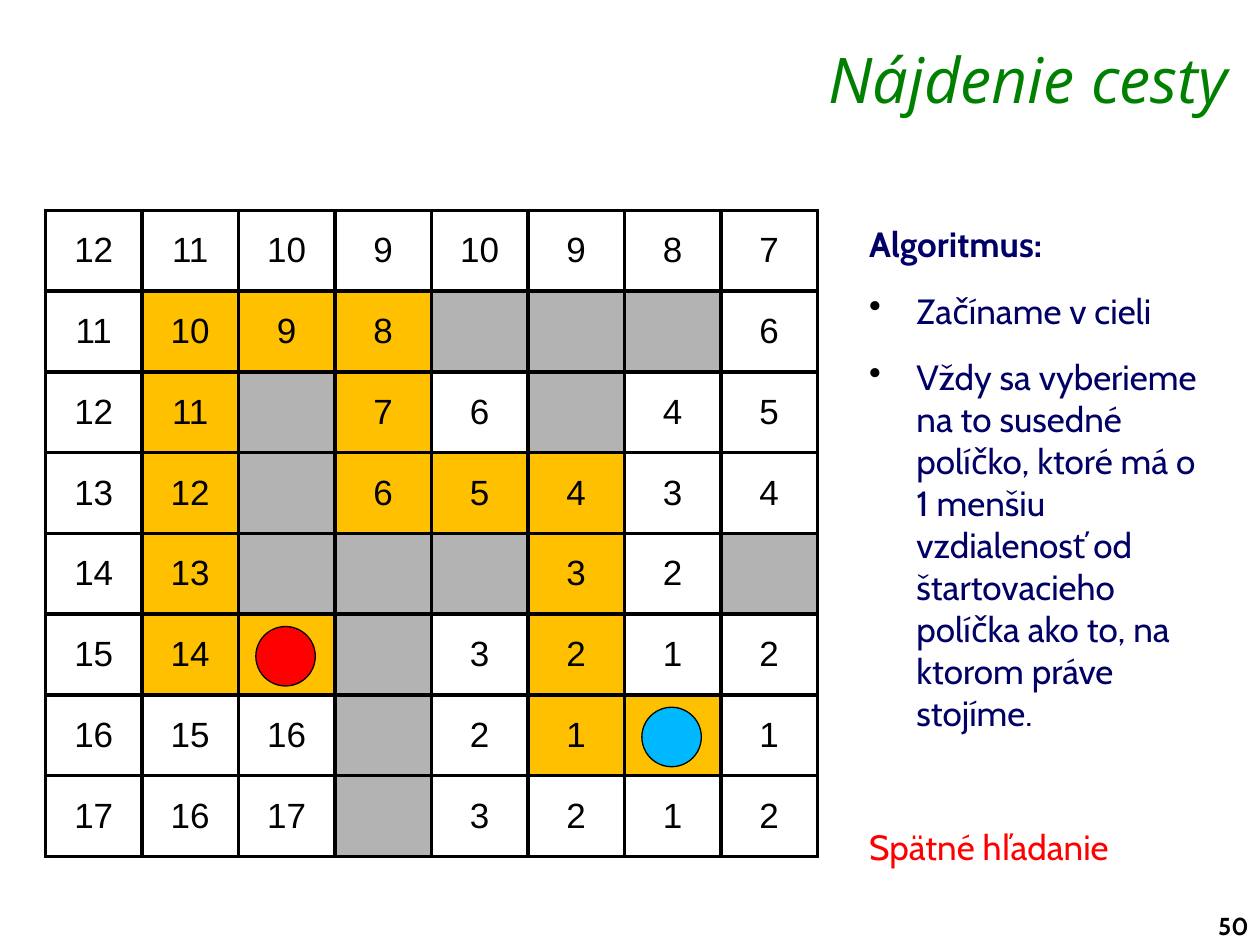
import pptx
import pptx.util
import pptx.dml.color
import pptx.enum.shapes
import pptx.enum.text
import pptx.oxml
import pptx.oxml.ns
from dataclasses import dataclass

Pt = pptx.util.Pt
ALIGN = pptx.enum.text.PP_ALIGN
ANCHOR = pptx.enum.text.MSO_ANCHOR

TITLE = "Nájdenie cesty"
PAGE_NUMBER = "50"

# "#" is a wall, "*" marks a square on the path; the rest is the distance.
MAZE = [
    "12 11 10 9 10 9 8 7",
    "11 10* 9* 8* # # # 6",
    "12 11* # 7* 6 # 4 5",
    "13 12* # 6* 5* 4* 3 4",
    "14 13* # # # 3* 2 #",
    "15 14* * # 3 2* 1 2",
    "16 15 16 # 2 1* * 1",
    "17 16 17 # 3 2 1 2",
]

HEADING = "Algoritmus:"
STEPS = [
    "Začíname v cieli",
    "Vždy sa vyberieme na to susedné políčko, ktoré má o 1 menšiu vzdialenosť "
    "od štartovacieho políčka ako to, na ktorom práve stojíme.",
]
CONCLUSION = "Spätné hľadanie"


@dataclass(frozen=True)
class Theme:
    title_font: str = "Open Sans"
    body_font: str = "Cabin"
    grid_font: str = "Arial"
    title_size: int = 36
    body_size: int = 20
    number_size: int = 14
    title: str = "008000"
    body: str = "000066"
    black: str = "000000"
    free: str = "FFFFFF"
    wall: str = "B3B3B3"
    path_square: str = "FFC000"
    start: str = "00B8FF"
    goal: str = "FF0000"


THEME = Theme()

# Row, column and colour of each marker
MARKERS = [(6, 6, THEME.start), (5, 2, THEME.goal)]

GRID_LEFT, GRID_TOP = 26, 120.2
CELL_WIDTH, CELL_HEIGHT = 55.15, 46.15
BORDER = 2.25
MARKER_SIZE = 34
MARKER_SHIFT = (-0.7, 1)
STEP_INDENT = 27
GAP = 7


def rgb(value):
    return pptx.dml.color.RGBColor.from_string(value)


def style(font, name, size, color, bold=False, italic=False):
    font.name, font.size = name, Pt(size)
    font.bold, font.italic = bold, italic
    font.color.rgb = rgb(color)


def add_text(page, left, top, width, height, wrap=True):
    box = page.shapes.add_textbox(Pt(left), Pt(top), Pt(width), Pt(height))
    box.text_frame.word_wrap = wrap
    return box.text_frame


def add_borders(cell):
    properties = cell._tc.get_or_add_tcPr()
    for side in "LRTB":
        properties.append(pptx.oxml.parse_xml(
            f'<a:ln{side} {pptx.oxml.ns.nsdecls("a")} w="{Pt(BORDER)}"><a:solidFill>'
            f'<a:srgbClr val="{THEME.black}"/></a:solidFill></a:ln{side}>'))


def set_indent(para, bullet):
    """Give the paragraph a hanging indent, with a black bullet if asked."""
    properties = para._p.get_or_add_pPr()
    properties.set("marL", str(Pt(STEP_INDENT)))
    properties.set("indent", str(-Pt(STEP_INDENT)))
    namespace = pptx.oxml.ns.nsdecls("a")
    if bullet:
        marks = [f'<a:buClr {namespace}><a:srgbClr val="{THEME.black}"/></a:buClr>',
                 f'<a:buChar {namespace} char="•"/>']
    else:
        marks = [f"<a:buNone {namespace}/>"]
    for mark in marks:
        properties.append(pptx.oxml.parse_xml(mark))


def add_maze(page):
    rows = [line.split() for line in MAZE]
    columns = len(rows[0])
    frame = page.shapes.add_table(
        len(rows), columns, Pt(GRID_LEFT), Pt(GRID_TOP),
        Pt(CELL_WIDTH * columns), Pt(CELL_HEIGHT * len(rows)))
    table = frame.table
    table.first_row = table.horz_banding = False
    for column in table.columns:
        column.width = Pt(CELL_WIDTH)
    for row in table.rows:
        row.height = Pt(CELL_HEIGHT)
    for row, codes in enumerate(rows):
        for column, code in enumerate(codes):
            cell = table.cell(row, column)
            cell.vertical_anchor = ANCHOR.MIDDLE
            add_borders(cell)
            cell.fill.solid()
            cell.fill.fore_color.rgb = rgb(
                THEME.wall if code == "#"
                else THEME.path_square if code.endswith("*") else THEME.free)
            distance = code.strip("#*")
            if distance:
                para = cell.text_frame.paragraphs[0]
                para.text = distance
                para.alignment = ALIGN.CENTER
                style(para.runs[0].font, THEME.grid_font, THEME.body_size, THEME.black)


def add_marker(page, row, column, color):
    center_x = GRID_LEFT + (column + 0.5) * CELL_WIDTH + MARKER_SHIFT[0]
    center_y = GRID_TOP + (row + 0.5) * CELL_HEIGHT + MARKER_SHIFT[1]
    marker = page.shapes.add_shape(
        pptx.enum.shapes.MSO_SHAPE.OVAL,
        Pt(center_x - MARKER_SIZE / 2), Pt(center_y - MARKER_SIZE / 2),
        Pt(MARKER_SIZE), Pt(MARKER_SIZE))
    marker.shadow.inherit = False
    marker.fill.solid()
    marker.fill.fore_color.rgb = rgb(color)
    marker.line.color.rgb = rgb(THEME.black)
    marker.line.width = Pt(0.75)


def add_algorithm(page):
    # text, colour, bold, bullet, space before
    lines = [(HEADING, THEME.body, True, False, 0)]
    lines += [(step, THEME.body, False, True, GAP) for step in STEPS]
    lines.append((CONCLUSION, THEME.goal, False, False, 45))
    frame = add_text(page, 489.6, 123.8, 208, 380)
    for index, (text, color, bold, bullet, before) in enumerate(lines):
        para = frame.add_paragraph() if index else frame.paragraphs[0]
        para.text = text
        set_indent(para, bullet)
        para.space_before, para.space_after = Pt(before), Pt(GAP)
        style(para.runs[0].font, THEME.body_font, THEME.body_size, color, bold)


def main():
    deck = pptx.Presentation()
    deck.slide_width, deck.slide_height = Pt(720), Pt(540)
    page = deck.slides.add_slide(deck.slide_layouts[6])

    number = add_text(page, 689, 517, 36.7, 23.8, wrap=False)
    number.text = PAGE_NUMBER
    style(number.paragraphs[0].runs[0].font, THEME.body_font,
          THEME.number_size, THEME.black, bold=True)

    title = add_text(page, 165, 22.3, 543.5, 42)
    title.margin_top, title.margin_bottom = Pt(1), Pt(0)
    title.text = TITLE
    title.paragraphs[0].alignment = ALIGN.RIGHT
    style(title.paragraphs[0].runs[0].font, THEME.title_font,
          THEME.title_size, THEME.title, italic=True)

    add_maze(page)
    for marker in MARKERS:
        add_marker(page, *marker)
    add_algorithm(page)
    deck.save("out.pptx")


if __name__ == "__main__":
    main()
